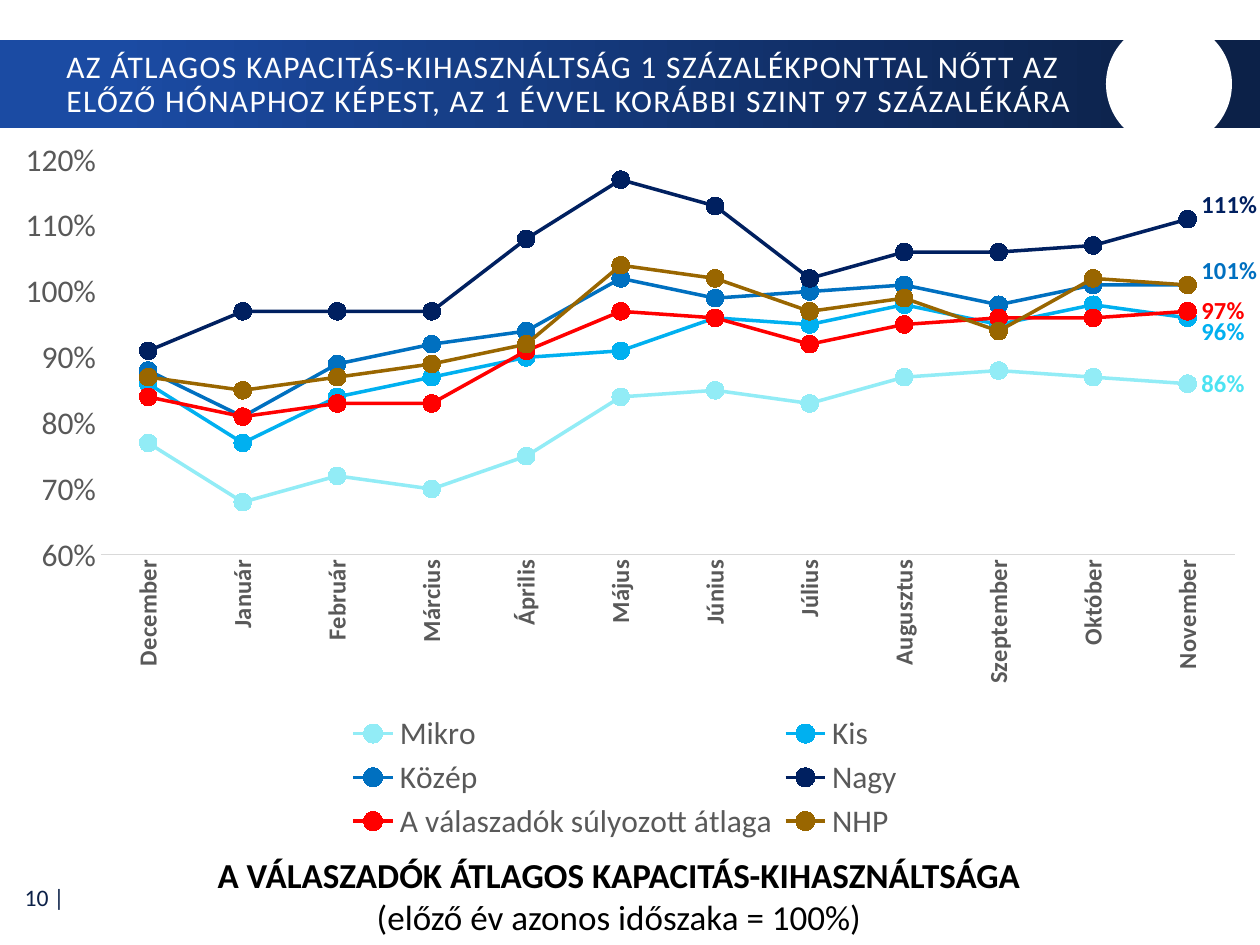
from lxml import etree
from pptx import Presentation
from pptx.chart.data import CategoryChartData
from pptx.dml.color import RGBColor
from pptx.enum.chart import XL_CHART_TYPE as ChartType, XL_LABEL_POSITION as LabelPosition
from pptx.enum.chart import XL_LEGEND_POSITION as LegendPosition, XL_MARKER_STYLE as Marker
from pptx.enum.chart import XL_TICK_MARK as Tick
from pptx.enum.shapes import MSO_SHAPE as Shape
from pptx.enum.text import MSO_ANCHOR as Anchor, PP_ALIGN as Align
from pptx.oxml import parse_xml
from pptx.oxml.ns import nsdecls, qn
from pptx.util import Emu, Pt

FONT = "Calibri"
WHITE = RGBColor(0xFF, 0xFF, 0xFF)
BLACK = RGBColor(0, 0, 0)
GREY = RGBColor(0x59, 0x59, 0x59)
RULE = RGBColor(0xD9, 0xD9, 0xD9)
ROYAL = RGBColor(0x1B, 0x4B, 0xA3)
MIDNIGHT = RGBColor(0x0C, 0x21, 0x48)
AQUA = RGBColor(0x92, 0xEC, 0xF6)
TURQUOISE = RGBColor(0x4C, 0xE3, 0xF2)
SKY = RGBColor(0x00, 0xB0, 0xF0)
BLUE = RGBColor(0x00, 0x70, 0xC0)
NAVY = RGBColor(0x00, 0x20, 0x60)
RED = RGBColor(0xFF, 0, 0)
BROWN = RGBColor(0x99, 0x66, 0)

MONTHS = ["December", "Január", "Február", "Március", "Április", "Május", "Június",
          "Július", "Augusztus", "Szeptember", "Október", "November"]
SERIES = [
    ("Mikro", AQUA, TURQUOISE, 0,
     [0.77, 0.68, 0.72, 0.7, 0.75, 0.84, 0.85, 0.83, 0.87, 0.88, 0.87, 0.86]),
    ("Kis", SKY, SKY, 0.02,
     [0.86, 0.77, 0.84, 0.87, 0.9, 0.91, 0.96, 0.95, 0.98, 0.95, 0.98, 0.96]),
    ("Közép", BLUE, None, 0,
     [0.88, 0.81, 0.89, 0.92, 0.94, 1.02, 0.99, 1, 1.01, 0.98, 1.01, 1.01]),
    ("Nagy", NAVY, NAVY, -0.02,
     [0.91, 0.97, 0.97, 0.97, 1.08, 1.17, 1.13, 1.02, 1.06, 1.06, 1.07, 1.11]),
    ("A válaszadók súlyozott átlaga", RED, RED, 0,
     [0.84, 0.81, 0.83, 0.83, 0.91, 0.97, 0.96, 0.92, 0.95, 0.96, 0.96, 0.97]),
    ("NHP", BROWN, BLUE, -0.02,
     [0.87, 0.85, 0.87, 0.89, 0.92, 1.04, 1.02, 0.97, 0.99, 0.94, 1.02, 1.01]),
]


def px(*lengths):
    return [Emu(round(length * 914400 / 126)) for length in lengths]


def style(font, size, color, bold=False):
    font.name, font.size, font.bold = FONT, Pt(size), bold
    font.color.rgb = color


deck = Presentation()
deck.slide_width, deck.slide_height = px(1260, 945)
page = deck.slides.add_slide(deck.slide_layouts[6])

band = page.shapes.add_shape(Shape.RECTANGLE, *px(0, 40, 1260, 88))
band.fill.gradient()
band.fill.gradient_angle = 0
for stop, color, position in zip(band.fill.gradient_stops, (ROYAL, MIDNIGHT), (0.09, 0.95)):
    stop.color.rgb, stop.position = color, position
disc = page.shapes.add_shape(Shape.OVAL, *px(1106, 21, 126, 126))
disc.fill.solid()
disc.fill.fore_color.rgb = WHITE
for shape in (band, disc):
    shape.line.fill.background()
    shape.shadow.inherit = False

texts = [
    ((1, 874, 76, 47), Anchor.MIDDLE, Align.RIGHT, [("10 |", 13.5, MIDNIGHT, False)]),
    ((54, 43, 1048, 84), Anchor.MIDDLE, Align.LEFT,
     [("AZ ÁTLAGOS KAPACITÁS-KIHASZNÁLTSÁG 1 SZÁZALÉKPONTTAL NŐTT AZ ELŐZŐ HÓNAPHOZ "
       "KÉPEST, AZ 1 ÉVVEL KORÁBBI SZINT 97 SZÁZALÉKÁRA", 18, WHITE, False)]),
    ((111, 847, 1016, 97), Anchor.TOP, Align.CENTER,
     [("A VÁLASZADÓK ÁTLAGOS KAPACITÁS-KIHASZNÁLTSÁGA", 20, BLACK, True),
      ("(előző év azonos időszaka = 100%)", 20, BLACK, False)]),
]
for area, anchor, align, lines in texts:
    box = page.shapes.add_textbox(*px(*area))
    frame = box.text_frame
    frame.word_wrap = True
    frame.vertical_anchor = anchor
    frame.text = "\n".join(line[0] for line in lines)
    for para, (text, size, color, bold) in zip(frame.paragraphs, lines):
        para.alignment = align
        style(para.font, size, color, bold)
        if color == WHITE:
            para.line_spacing = 0.9
            para.runs[0].font._element.set("spc", "80")

data = CategoryChartData(number_format="0%")
data.categories = MONTHS
for name, color, label_color, shift, values in SERIES:
    data.add_series(name, values)
chart = page.shapes.add_chart(ChartType.LINE_MARKERS, *px(0, 127, 1260, 719), data).chart
chart.has_title = False
style(chart.font, 18, BLACK)
chart.plots[0].vary_by_categories = False

for series, (name, color, label_color, shift, values) in zip(chart.plots[0].series, SERIES):
    series.smooth = False
    series.format.line.color.rgb = color
    series.format.line.width = Pt(2)
    series.marker.style = Marker.CIRCLE
    series.marker.size = 10
    series.marker.format.fill.solid()
    series.marker.format.fill.fore_color.rgb = color
    series.marker.format.line.color.rgb = color
    if label_color is None:
        continue
    label = series.points[len(MONTHS) - 1].data_label
    style(label.font, 14, label_color, True)
    label.position = LabelPosition.RIGHT
    series.data_labels.show_value = False
    if shift:
        node = series._element.xpath(".//c:dLbl")[0]
        node.insert(1, parse_xml(
            f'<c:layout {nsdecls("c")}><c:manualLayout><c:x val="0"/>'
            f'<c:y val="{shift}"/></c:manualLayout></c:layout>'))

months = chart.category_axis
months.major_tick_mark = Tick.NONE
months.format.line.color.rgb = RULE
months.format.line.width = Pt(0.75)
style(months.tick_labels.font, 14, GREY, True)
months._element.find(qn("c:txPr")).find(qn("a:bodyPr")).set("rot", "-5400000")

percent = chart.value_axis
percent.minimum_scale, percent.maximum_scale, percent.major_unit = 0.6, 1.2, 0.1
percent.has_major_gridlines = False
percent.major_tick_mark = Tick.NONE
percent.format.line.fill.background()
percent.tick_labels.number_format = "0%"
percent.tick_labels.number_format_is_linked = False
style(percent.tick_labels.font, 18, GREY)

chart.has_legend = True
chart.legend.position = LegendPosition.BOTTOM
chart.legend.include_in_layout = False
style(chart.legend.font, 18, GREY)

plot_area = chart._chartSpace.chart.plotArea
layouts = [(plot_area, 0, "inner", (101, 33, 1134, 395)),
           (chart.legend._element, 1, None, (340, 582, 570, 137))]
for parent, index, target, (left, top, width, height) in layouts:
    for old in parent.findall(qn("c:layout")):
        parent.remove(old)
    layout = etree.Element(qn("c:layout"))
    manual = etree.SubElement(layout, qn("c:manualLayout"))
    settings = [("layoutTarget", target), ("xMode", "edge"), ("yMode", "edge"),
                ("x", left / 1260), ("y", top / 719), ("w", width / 1260), ("h", height / 719)]
    for tag, value in settings:
        if value is not None:
            etree.SubElement(manual, qn(f"c:{tag}")).set("val", str(value))
    parent.insert(index, layout)

deck.save("out.pptx")
